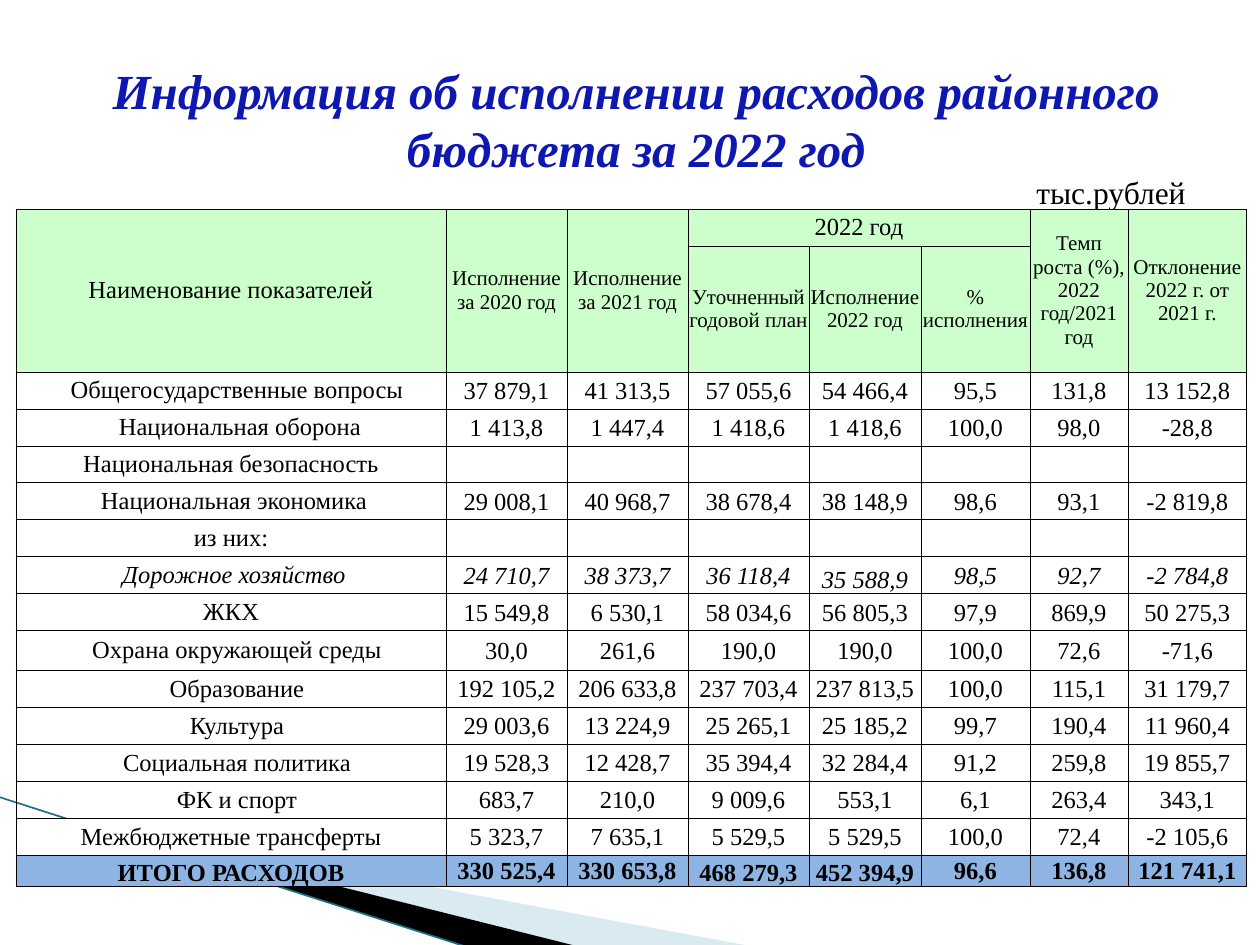
"""Build the slide on district budget expenditure in 2022."""
from dataclasses import dataclass

from lxml.etree import SubElement
from pptx import Presentation
from pptx.dml.color import RGBColor
from pptx.enum.shapes import MSO_CONNECTOR
from pptx.enum.text import MSO_ANCHOR, PP_ALIGN
from pptx.oxml.ns import qn
from pptx.util import Emu, Pt

SCALE = 914400 / 126
FONT = "Times New Roman"
COLORS = {
    "title": "0F17B1",
    "text": "000000",
    "header": "CCFFCC",
    "total": "8DB4E3",
    "white": "FFFFFF",
    "light_wedge": "A0CBDC",
    "dark_wedge": "000000",
    "edge": "1F6F85",
}
COLUMN_WIDTHS = [430, 121, 121, 121, 112, 109, 98, 119]
ROW_HEIGHTS = [37, 126] + [37] * 7 + [40] + [37] * 5 + [31]


@dataclass(frozen=True)
class HeaderCell:
    row: int
    column: int
    text: str
    size: int = 12
    rows: int = 1
    columns: int = 1


@dataclass(frozen=True)
class Expense:
    name: str
    values: str = ";;;;;;"
    indent: int = 0
    bold: bool = False
    italic: bool = False
    name_fill: str = ""
    value_fill: str = ""
    bottom_columns: tuple[int, ...] = ()


HEADERS = [
    HeaderCell(0, 0, "Наименование показателей", size=14, rows=2),
    HeaderCell(0, 1, "Исполнение за 2020 год", rows=2),
    HeaderCell(0, 2, "Исполнение за 2021 год", rows=2),
    HeaderCell(0, 3, "2022 год", size=14, columns=3),
    HeaderCell(0, 6, "Темп роста (%), 2022 год/2021 год", rows=2),
    HeaderCell(0, 7, "Отклонение 2022 г. от 2021 г.", rows=2),
    HeaderCell(1, 3, "Уточненный годовой план"),
    HeaderCell(1, 4, "Исполнение 2022 год"),
    HeaderCell(1, 5, "% исполнения"),
]
EXPENSES = [
    Expense("Общегосударственные вопросы", "37 879,1;41 313,5;57 055,6;54 466,4;95,5;131,8;13 152,8", 12),
    Expense("Национальная оборона", "1 413,8;1 447,4;1 418,6;1 418,6;100,0;98,0;-28,8", 18),
    Expense("Национальная безопасность"),
    Expense("Национальная экономика", "29 008,1;40 968,7;38 678,4;38 148,9;98,6;93,1;-2 819,8", 6),
    Expense("из них:"),
    Expense("Дорожное хозяйство", "24 710,7;38 373,7;36 118,4;35 588,9;98,5;92,7;-2 784,8", 6,
            italic=True, bottom_columns=(4,)),
    Expense("ЖКХ", "15 549,8;6 530,1;58 034,6;56 805,3;97,9;869,9;50 275,3"),
    Expense("Охрана окружающей среды", "30,0;261,6;190,0;190,0;100,0;72,6;-71,6", 12),
    Expense("Образование", "192 105,2;206 633,8;237 703,4;237 813,5;100,0;115,1;31 179,7", 12),
    Expense("Культура", "29 003,6;13 224,9;25 265,1;25 185,2;99,7;190,4;11 960,4", 12),
    Expense("Социальная политика", "19 528,3;12 428,7;35 394,4;32 284,4;91,2;259,8;19 855,7", 12),
    Expense("ФК и спорт", "683,7;210,0;9 009,6;553,1;6,1;263,4;343,1", 12),
    Expense("Межбюджетные трансферты", "5 323,7;7 635,1;5 529,5;5 529,5;100,0;72,4;-2 105,6",
            name_fill="white"),
    Expense("ИТОГО РАСХОДОВ", "330 525,4;330 653,8;468 279,3;452 394,9;96,6;136,8;121 741,1",
            bold=True, name_fill="total", value_fill="total", bottom_columns=(0, 3, 4)),
]


def px(length: int) -> Emu:
    """Turn whole px into EMU."""
    return Emu(round(length * SCALE))


def rgb(color: str) -> RGBColor:
    """Look a colour up by its role."""
    return RGBColor.from_string(COLORS[color])


def write_text(frame, text: str, *, size: int = 14, color: str = "text", bold: bool = False,
               italic: bool = False, align=PP_ALIGN.CENTER) -> None:
    """Write one formatted paragraph into a text frame."""
    paragraph = frame.paragraphs[0]
    paragraph.alignment = align
    if not text:
        SubElement(paragraph._p, qn("a:endParaRPr"), sz=str(size * 100))
        return
    run = paragraph.add_run()
    run.text = text
    run.font.name = FONT
    run.font.size = Pt(size)
    run.font.bold = bold
    run.font.italic = italic
    run.font.color.rgb = rgb(color)


def add_wedge(slide, box: tuple[int, int, int, int], points: list[tuple[int, int]], color: str,
              opacity: int = 100) -> None:
    """Draw a decorative wedge whose outline may reach beyond its box."""
    builder = slide.shapes.build_freeform(*points[0], scale=SCALE)
    builder.add_line_segments(points[1:], close=True)
    wedge = builder.convert_to_shape()
    left, top, width, height = box
    shift_x = min(x for x, _ in points) - left
    shift_y = min(y for _, y in points) - top
    wedge.left, wedge.top, wedge.width, wedge.height = map(px, box)
    outline = wedge._element.find(f".//{qn('a:path')}")
    outline.set("w", str(width))
    outline.set("h", str(height))
    for point in outline.iter(qn("a:pt")):
        point.set("x", str(int(point.get("x")) + shift_x))
        point.set("y", str(int(point.get("y")) + shift_y))
    wedge.shadow.inherit = False
    wedge.fill.solid()
    wedge.fill.fore_color.rgb = rgb(color)
    wedge.line.fill.background()
    if opacity < 100:
        tint = wedge.fill._xPr.find(f".//{qn('a:srgbClr')}")
        SubElement(tint, qn("a:alpha"), val=str(opacity * 1000))


def add_edge(slide, start: tuple[int, int], end: tuple[int, int]) -> None:
    """Draw the thin line along the wedges."""
    edge = slide.shapes.add_connector(MSO_CONNECTOR.STRAIGHT, *map(px, start + end))
    edge.line.color.rgb = rgb("edge")
    edge.line.width = Pt(0.95)
    SubElement(edge._element.spPr, qn("a:effectLst"))


def add_label(slide, box: tuple[int, int, int, int], text: str, *, wrap: bool, anchor, **style) -> None:
    """Add a text box."""
    frame = slide.shapes.add_textbox(*map(px, box)).text_frame
    frame.word_wrap = wrap
    frame.vertical_anchor = anchor
    write_text(frame, text, **style)


def frame_cell(cell, fill: str) -> None:
    """Give a cell thin black borders and its fill."""
    properties = cell._tc.get_or_add_tcPr()
    for side in ("lnL", "lnR", "lnT", "lnB"):
        border = SubElement(properties, qn(f"a:{side}"), w=str(Pt(0.5)))
        SubElement(SubElement(border, qn("a:solidFill")), qn("a:srgbClr"), val=COLORS["text"])
    if fill:
        cell.fill.solid()
        cell.fill.fore_color.rgb = rgb(fill)
    else:
        cell.fill.background()


def fill_cell(cell, text: str, *, left: int = 0, inset: int = 0, bottom: bool = False, **style) -> None:
    """Set a cell's margins and anchor and write its text."""
    cell.margin_left = px(left + inset)
    cell.margin_right = cell.margin_top = px(inset)
    cell.margin_bottom = 0
    cell.vertical_anchor = MSO_ANCHOR.BOTTOM if bottom else MSO_ANCHOR.MIDDLE
    write_text(cell.text_frame, text, **style)


def add_budget_table(slide) -> None:
    """Add the table of expenses."""
    box = (16, 209, sum(COLUMN_WIDTHS), sum(ROW_HEIGHTS))
    table = slide.shapes.add_table(len(ROW_HEIGHTS), len(COLUMN_WIDTHS), *map(px, box)).table
    table.first_row = table.horz_banding = False
    for column, width in zip(table.columns, COLUMN_WIDTHS):
        column.width = px(width)
    for row, height in zip(table.rows, ROW_HEIGHTS):
        row.height = px(height)
    for row in range(2):
        for column in range(len(COLUMN_WIDTHS)):
            frame_cell(table.cell(row, column), "header")
    for header in HEADERS:
        cell = table.cell(header.row, header.column)
        if header.rows * header.columns > 1:
            cell.merge(table.cell(header.row + header.rows - 1, header.column + header.columns - 1))
        fill_cell(cell, header.text, size=header.size)
    for row, expense in enumerate(EXPENSES, start=2):
        for column, text in enumerate([expense.name, *expense.values.split(";")]):
            cell = table.cell(row, column)
            frame_cell(cell, expense.value_fill if column else expense.name_fill)
            fill_cell(cell, text, left=0 if column else expense.indent, inset=1 if column else 0,
                      bottom=column in expense.bottom_columns, bold=expense.bold, italic=expense.italic)


def main() -> None:
    """Build and save the slide."""
    deck = Presentation()
    deck.slide_width, deck.slide_height = px(1260), px(945)
    slide = deck.slides.add_slide(deck.slide_layouts[6])
    add_wedge(slide, (98, 689, 524, 199), [(69, 820), (750, 946), (575, 946), (69, 819)], "light_wedge", opacity=40)
    add_wedge(slide, (-8, 798, 524, 116), [(67, 818), (576, 946), (469, 948), (68, 819)], "dark_wedge")
    add_edge(slide, (-1, 797), (467, 947))
    add_label(slide, (69, 49, 1134, 140), "Информация об исполнении расходов районного бюджета за 2022 год",
              wrap=True, anchor=MSO_ANCHOR.MIDDLE, size=28, color="title", bold=True, italic=True)
    add_label(slide, (1024, 167, 176, 50), "тыс.рублей", wrap=False, anchor=MSO_ANCHOR.TOP,
              size=18, align=PP_ALIGN.LEFT)
    add_budget_table(slide)
    deck.save("out.pptx")


if __name__ == "__main__":
    main()
